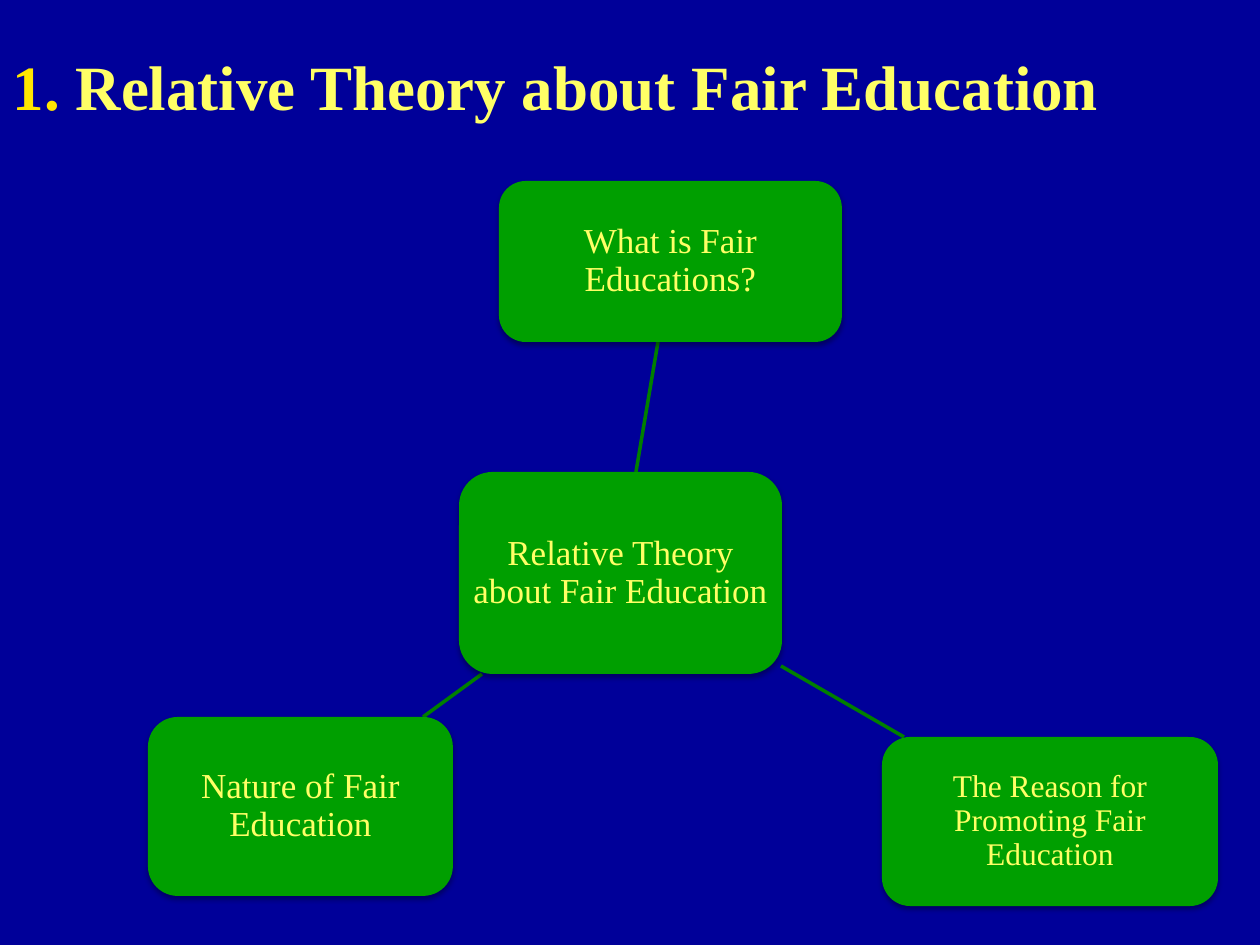
from lxml.etree import SubElement
from pptx import Presentation
from pptx.dml.color import RGBColor
from pptx.enum.shapes import MSO_CONNECTOR, MSO_SHAPE
from pptx.enum.text import MSO_ANCHOR, PP_ALIGN
from pptx.oxml import parse_xml
from pptx.oxml.ns import nsdecls, qn
from pptx.util import Inches, Pt

PX = Inches(1) / 126
FONT = "Times New Roman"
BACKGROUND, GREEN, LINK_GREEN = "000099", "009F00", "007F00"
YELLOW, GOLD = "FFFF66", "FFE701"

TITLE_BOX = (0, 26, 1275, 118)
TITLE_RUNS = [("1. ", GOLD), ("Relative Theory about Fair Education", YELLOW)]

# Topic, box (left, top, width, height), text size
TOPICS = [
    ("Relative Theory about Fair Education", (459, 472, 323, 202), 20),
    ("What is Fair Educations?", (499, 181, 343, 161), 20),
    ("The Reason for Promoting Fair Education", (882, 737, 336, 169), 18),
    ("Nature of Fair Education", (148, 717, 305, 179), 20),
]
# From the central topic to each outer topic
LINKS = [(636, 472, 658, 342), (781, 666, 904, 737), (482, 674, 423, 717)]

SHADOW = f"""<a:effectLst {nsdecls('a')}>
  <a:outerShdw blurRad="{Pt(3.1)}" dist="{Pt(1.8)}" dir="5400000" rotWithShape="0">
    <a:srgbClr val="000000"><a:alpha val="35000"/></a:srgbClr>
  </a:outerShdw>
</a:effectLst>"""


def px(lengths):
    return [round(length * PX) for length in lengths]


def color(value):
    return RGBColor.from_string(value)


def add_run(paragraph, words, size, value, bold=False):
    run = paragraph.add_run()
    run.text = words
    run.font.name, run.font.size, run.font.bold = FONT, Pt(size), bold
    run.font.color.rgb = color(value)


def add_link(slide, ends):
    link = slide.shapes.add_connector(MSO_CONNECTOR.STRAIGHT, *px(ends))
    link.line.color.rgb = color(LINK_GREEN)
    link.line.width = Pt(2)
    SubElement(link._element.spPr, qn("a:effectLst"))


def add_topic(slide, words, box, size):
    topic = slide.shapes.add_shape(MSO_SHAPE.ROUNDED_RECTANGLE, *px(box))
    topic.fill.solid()
    topic.fill.fore_color.rgb = color(GREEN)
    topic.line.fill.background()
    topic._element.spPr.append(parse_xml(SHADOW))

    # The rounded corners already inset the text
    frame = topic.text_frame
    frame.word_wrap = True
    frame.vertical_anchor = MSO_ANCHOR.MIDDLE
    frame.margin_left = frame.margin_right = 0
    frame.margin_top = frame.margin_bottom = 0
    paragraph = frame.paragraphs[0]
    paragraph.alignment = PP_ALIGN.CENTER
    paragraph.line_spacing = 0.9
    add_run(paragraph, words, size, YELLOW)


def main():
    prs = Presentation()
    prs.slide_width, prs.slide_height = Inches(10), Inches(7.5)
    slide = prs.slides.add_slide(prs.slide_layouts[5])
    slide.background.fill.solid()
    slide.background.fill.fore_color.rgb = color(BACKGROUND)

    # Title
    title = slide.shapes.title
    title.left, title.top, title.width, title.height = px(TITLE_BOX)
    title.text_frame.vertical_anchor = MSO_ANCHOR.MIDDLE
    heading = title.text_frame.paragraphs[0]
    heading.alignment = PP_ALIGN.LEFT
    for words, value in TITLE_RUNS:
        add_run(heading, words, 36, value, bold=True)

    # Radial diagram
    for ends in LINKS:
        add_link(slide, ends)
    for words, box, size in TOPICS:
        add_topic(slide, words, box, size)

    prs.save("out.pptx")


if __name__ == "__main__":
    main()
